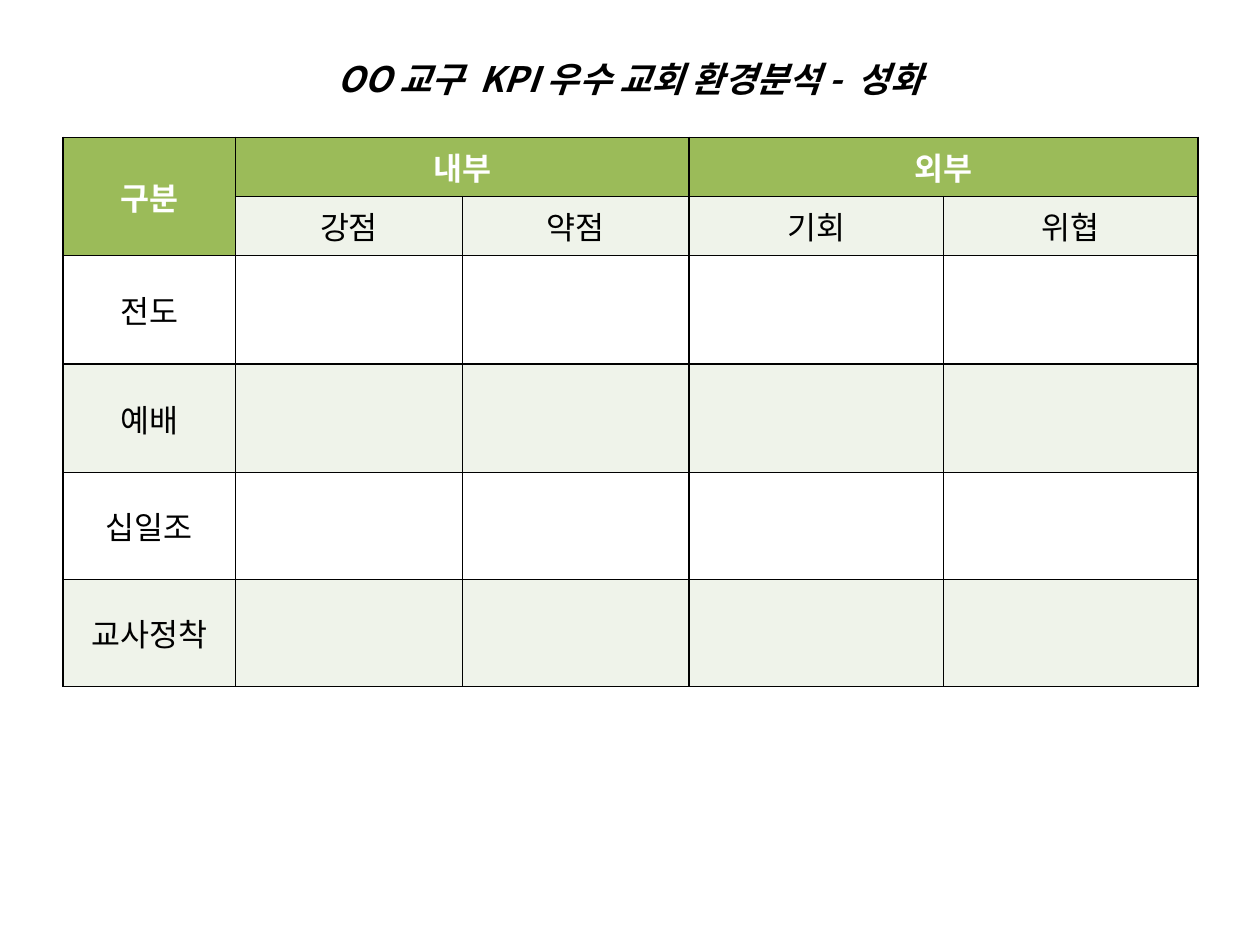
"""Build a slide with a SWOT table for church growth areas."""
from lxml.etree import SubElement
from pptx import Presentation
from pptx.dml.color import RGBColor
from pptx.enum.text import MSO_ANCHOR, PP_ALIGN
from pptx.oxml.ns import qn
from pptx.util import Inches, Pt

FACE = "Noto Sans CJK KR"
BLACK = RGBColor(0x00, 0x00, 0x00)
WHITE = RGBColor(0xFF, 0xFF, 0xFF)
GREEN = RGBColor(0x9B, 0xBB, 0x59)
PALE = RGBColor(0xEF, 0xF3, 0xEA)

TITLE = {"size": Pt(20), "bold": True, "italic": True}
HEAD = {"size": Pt(18), "bold": True}
BODY = {"size": Pt(18), "bold": False}

WIDTHS = [1.37, 1.8, 1.8, 2.02, 2.02]
HEIGHTS = [0.47, 0.47, 0.86, 0.86, 0.85, 0.85]
ROWS = [
    ["구분", "내부", "", "외부", ""],
    ["", "강점", "약점", "기회", "위협"],
    ["전도"],
    ["예배"],
    ["십일조"],
    ["교사정착"],
]
SPANS = [((0, 0), (1, 0)), ((0, 1), (0, 2)), ((0, 3), (0, 4))]


def write(frame, text, color, style):
    para = frame.paragraphs[0]
    para.alignment = PP_ALIGN.CENTER
    run = para.add_run()
    run.text = text
    run.font.color.rgb = color
    run.font.name = FACE
    for name, value in style.items():
        setattr(run.font, name, value)
    SubElement(run.font._element, qn("a:ea")).set("typeface", FACE)


def border(cell):
    props = cell._tc.get_or_add_tcPr()
    for spot, side in enumerate(("a:lnL", "a:lnR", "a:lnT", "a:lnB")):
        line = SubElement(props, qn(side), w=str(Pt(1)))
        fill = SubElement(line, qn("a:solidFill"))
        SubElement(fill, qn("a:srgbClr"), val=str(BLACK))
        props.insert(spot, line)


deck = Presentation()
deck.slide_width, deck.slide_height = Inches(10), Inches(7.5)
slide = deck.slides.add_slide(deck.slide_layouts[6])

box = slide.shapes.add_textbox(Inches(0.5), Inches(0.31), Inches(9), Inches(0.63))
frame = box.text_frame
for name, value in {"word_wrap": True, "vertical_anchor": MSO_ANCHOR.MIDDLE}.items():
    setattr(frame, name, value)
write(frame, "OO 교구  KPI 우수 교회 환경분석 -  성화", BLACK, TITLE)

table = slide.shapes.add_table(
    len(HEIGHTS), len(WIDTHS), Inches(0.5), Inches(1.09), Inches(9), Inches(4.38)
).table
for col, width in zip(table.columns, WIDTHS):
    col.width = Inches(width)
for row, height in zip(table.rows, HEIGHTS):
    row.height = Inches(height)
for start, end in SPANS:
    table.cell(*start).merge(table.cell(*end))

for r, words in enumerate(ROWS):
    for c in range(len(WIDTHS)):
        cell = table.cell(r, c)
        head = r == 0 or (r == 1 and c == 0)
        cell.fill.solid()
        cell.fill.fore_color.rgb = GREEN if head else PALE if r % 2 else WHITE
        cell.vertical_anchor = MSO_ANCHOR.MIDDLE
        border(cell)
        if c < len(words) and words[c]:
            write(cell.text_frame, words[c], WHITE if head else BLACK, HEAD if head else BODY)

deck.save("out.pptx")
